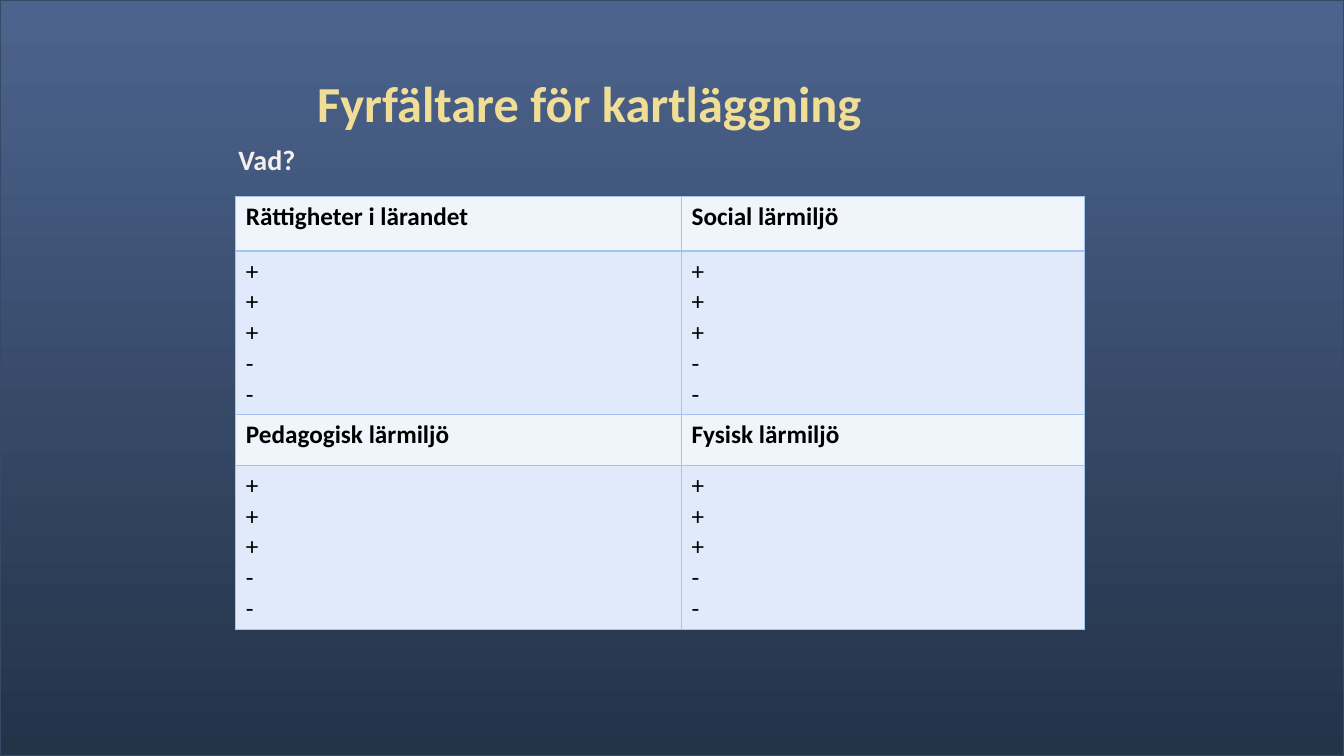
from dataclasses import dataclass

from lxml.etree import SubElement
from pptx import Presentation
from pptx.dml.color import RGBColor as Rgb
from pptx.enum.shapes import MSO_SHAPE as Preset
from pptx.enum.text import MSO_ANCHOR as Anchor, MSO_AUTO_SIZE as AutoSize, PP_ALIGN as Align
from pptx.oxml.ns import qn
from pptx.util import Inches, Pt


@dataclass(frozen=True)
class Theme:
    font: str = "Calibri"
    paper: str = "F4F1EB"
    backdrop_top: str = "4C638D"
    backdrop_bottom: str = "233348"
    backdrop_edge: str = "384968"
    title: str = "F0DE96"
    ink: str = "000000"
    heading_fill: str = "F0F5FC"
    rating_fill: str = "E0EAFA"
    border: str = "A3C5F2"
    title_size: int = 36
    question_size: int = 20
    cell_size: int = 18


THEME = Theme()
WIDTH, HEIGHT = Inches(13.33), Inches(7.5)
RATINGS = "\n".join("+++--")
FIELDS = [
    ("Rättigheter i lärandet", "Social lärmiljö"),
    (RATINGS, RATINGS),
    ("Pedagogisk lärmiljö", "Fysisk lärmiljö"),
    (RATINGS, RATINGS),
]
COLUMN_SHARES = (33.16, 30)
ROW_SHARES = (7.2, 21.67, 6.67, 21.67)


def across(percent):
    return int(WIDTH * percent / 100)


def down(percent):
    return int(HEIGHT * percent / 100)


def area(left, top, width, height):
    return across(left), down(top), across(width), down(height)


def style_text(frame, size, color, bold=True):
    for paragraph in frame.paragraphs:
        for run in paragraph.runs:
            run.font.name = THEME.font
            run.font.size = Pt(size)
            run.font.bold = bold
            run.font.color.rgb = Rgb.from_string(color)


def add_backdrop(slide):
    paper = slide.background.fill
    paper.solid()
    paper.fore_color.rgb = Rgb.from_string(THEME.paper)
    backdrop = slide.shapes.add_shape(Preset.RECTANGLE, *area(0, 0, 100, 100))
    backdrop.shadow.inherit = False
    backdrop.fill.gradient()
    backdrop.fill.gradient_angle = 270
    shades = (THEME.backdrop_top, THEME.backdrop_bottom)
    for position, (stop, shade) in enumerate(zip(backdrop.fill.gradient_stops, shades)):
        stop.position = position
        stop.color.rgb = Rgb.from_string(shade)
    backdrop.line.color.rgb = Rgb.from_string(THEME.backdrop_edge)
    backdrop.line.width = Pt(1)
    slide.shapes.element.insert(2, backdrop.element)


def set_title(slide, wording):
    title = slide.shapes.title
    title.left, title.top, title.width, title.height = area(17, 8.13, 68.7, 11.87)
    frame = title.text_frame
    frame.text = wording
    frame.vertical_anchor = Anchor.MIDDLE
    heading = frame.paragraphs[0]
    heading.alignment = Align.LEFT
    heading.line_spacing = 0.9
    properties = heading._p.get_or_add_pPr()
    properties.set("marL", str(Inches(0.78)))
    properties.set("indent", "0")
    style_text(frame, THEME.title_size, THEME.title)


def add_question(slide, wording):
    question = slide.shapes.add_textbox(*area(17, 18.13, 13.6, 5.87))
    frame = question.text_frame
    frame.word_wrap = True
    frame.auto_size = AutoSize.SHAPE_TO_FIT_TEXT
    frame.text = wording
    style_text(frame, THEME.question_size, THEME.paper)


def add_borders(cell):
    properties = cell._tc.get_or_add_tcPr()
    for side in ("a:lnL", "a:lnR", "a:lnT", "a:lnB"):
        border = SubElement(properties, qn(side), w=str(Pt(1)))
        paint = SubElement(border, qn("a:solidFill"))
        SubElement(paint, qn("a:srgbClr"), val=THEME.border)


def fill_field(cell, wording, is_heading):
    add_borders(cell)
    cell.fill.solid()
    color = THEME.heading_fill if is_heading else THEME.rating_fill
    cell.fill.fore_color.rgb = Rgb.from_string(color)
    cell.text_frame.text = wording
    style_text(cell.text_frame, THEME.cell_size, THEME.ink, is_heading)


def add_fields(slide):
    place = area(17.55, 26, sum(COLUMN_SHARES), sum(ROW_SHARES))
    fields = slide.shapes.add_table(len(ROW_SHARES), len(COLUMN_SHARES), *place).table
    for column, share in zip(fields.columns, COLUMN_SHARES):
        column.width = across(share)
    for row, share in zip(fields.rows, ROW_SHARES):
        row.height = down(share)
    for row_index, wordings in enumerate(FIELDS):
        for column_index, wording in enumerate(wordings):
            fill_field(fields.cell(row_index, column_index), wording, row_index % 2 == 0)


def main():
    deck = Presentation()
    deck.slide_width, deck.slide_height = WIDTH, HEIGHT
    slide = deck.slides.add_slide(deck.slide_layouts.get_by_name("Title Only"))
    add_backdrop(slide)
    add_fields(slide)
    add_question(slide, "Vad?")
    set_title(slide, "Fyrfältare för kartläggning")
    deck.save("out.pptx")


if __name__ == "__main__":
    main()
